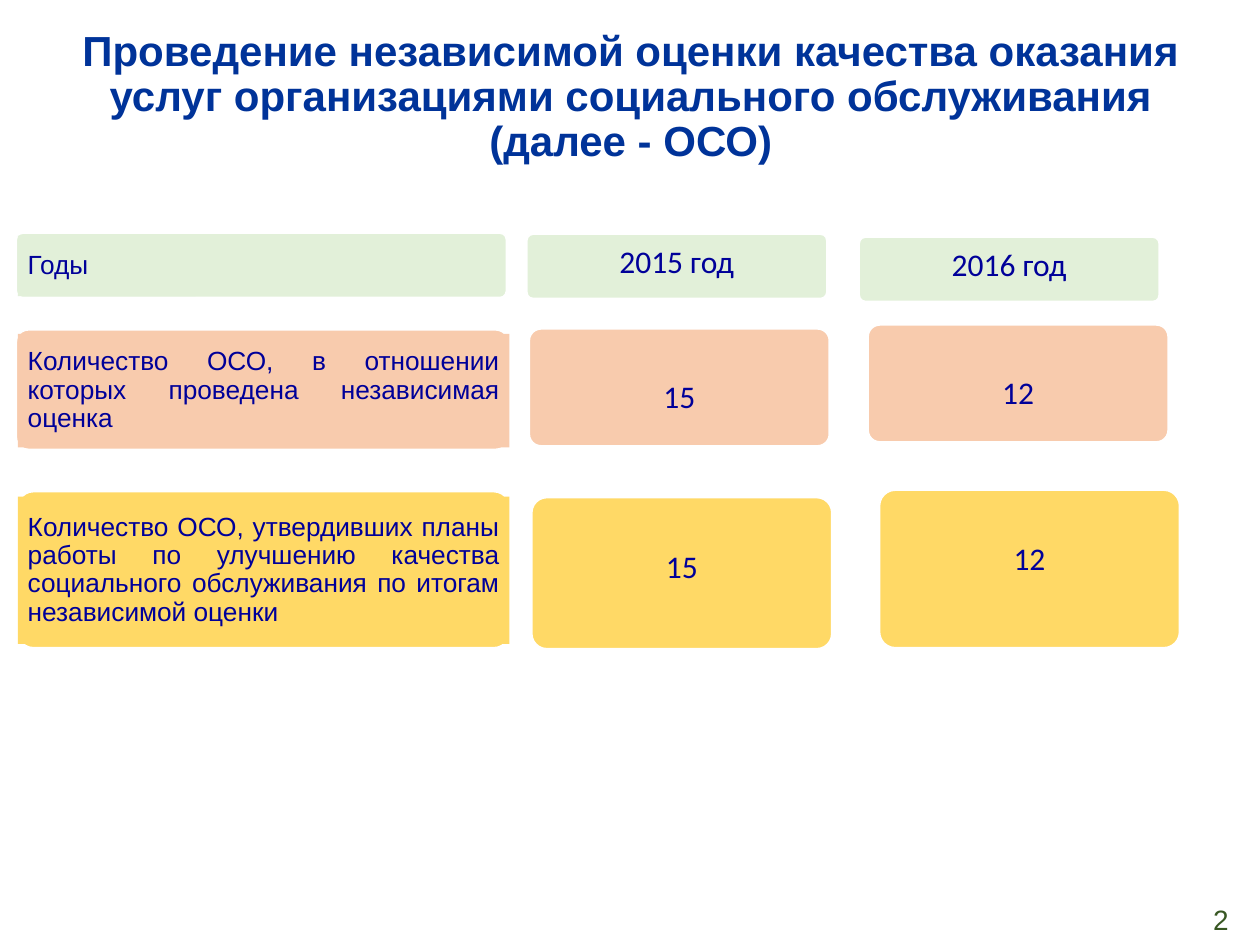
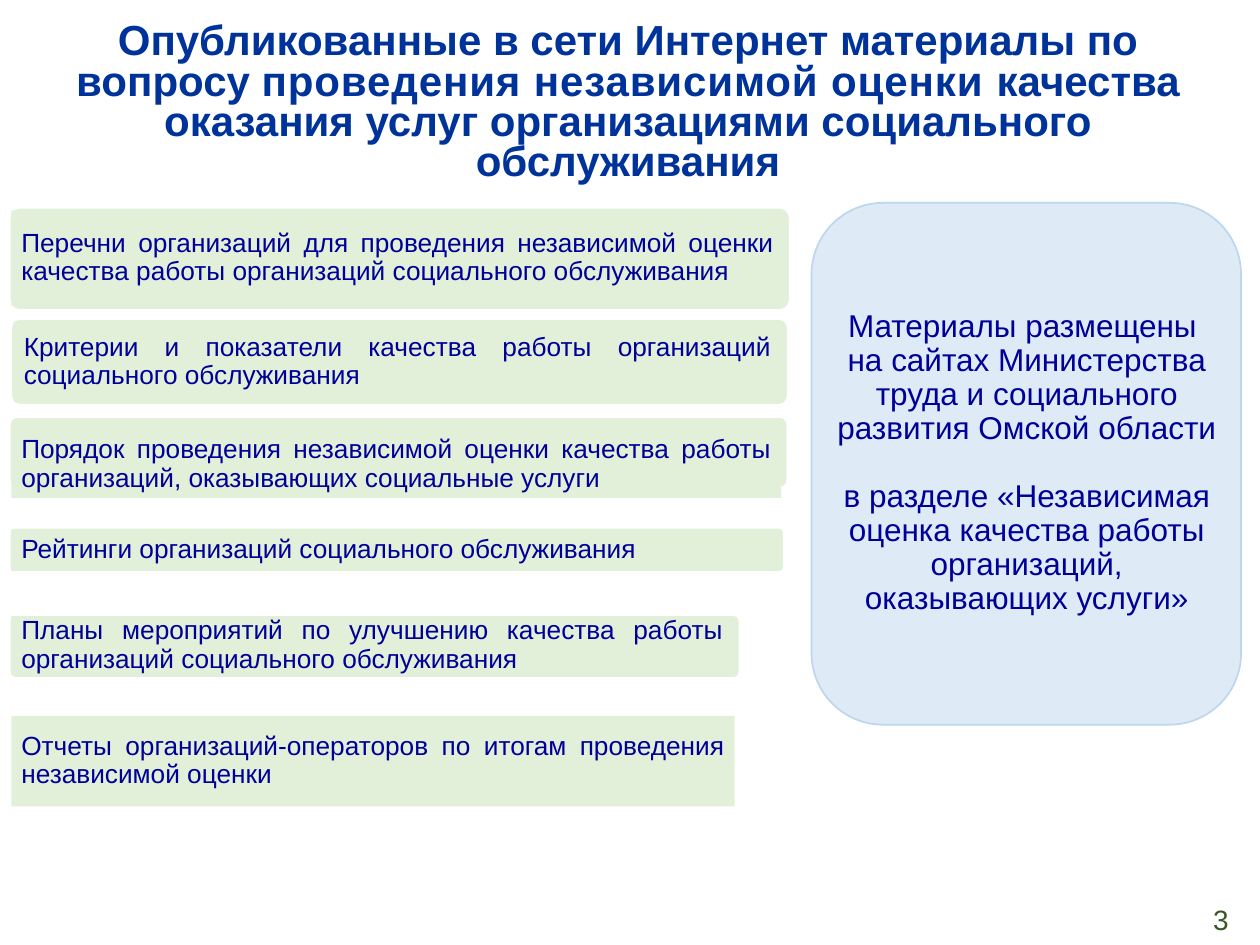
import pptx
import pptx.dml.color
import pptx.enum.shapes
import pptx.enum.text
import pptx.util

Cm = pptx.util.Cm
Pt = pptx.util.Pt
Align = pptx.enum.text.PP_ALIGN
Anchor = pptx.enum.text.MSO_ANCHOR
Preset = pptx.enum.shapes.MSO_SHAPE

# Shared colours
WHITE = "FFFFFF"
TITLE_BLUE = "003399"
TEXT_BLUE = "000099"
NUMBER_GREEN = "385723"
GREEN = "E2F0D9"
ORANGE = "F8CBAD"
YELLOW = "FFD966"
PALE_BLUE = "DEEBF7"
EDGE_BLUE = "BDD7EE"


def paint(color_format, hex_color):
    color_format.rgb = pptx.dml.color.RGBColor.from_string(hex_color)


class Builder:
    """Holds the deck, its style and the current page."""

    def __init__(self):
        self.deck = pptx.Presentation()
        self.deck.slide_width, self.deck.slide_height = Cm(25.4), Cm(19.05)
        self.page = None

    def new_page(self, number):
        self.page = self.deck.slides.add_slide(self.deck.slide_layouts[5])
        box = self.text_box((19.3, 18.03, 5.72, 1.02))
        self.add_text(box, [str(number)], 16, color=NUMBER_GREEN, align=Align.RIGHT)

    def title(self, frame, spans, line_spacing):
        """Spans are (text, letter spacing in hundredths of a point)."""
        box = self.page.shapes.title
        box.left, box.top, box.width, box.height = map(Cm, frame)
        box.text_frame.auto_size = pptx.enum.text.MSO_AUTO_SIZE.NONE
        box.text_frame.word_wrap = True
        box.text_frame.vertical_anchor = Anchor.MIDDLE
        para = box.text_frame.paragraphs[0]
        para.alignment, para.line_spacing = Align.CENTER, line_spacing
        for text, tracking in spans:
            span = self.span(para, text, 24, "Arial", TITLE_BLUE)
            span.font.bold = True
            if tracking:
                span.font._element.set("spc", str(tracking))

    def span(self, para, text, size, font, color):
        span = para.add_run()
        span.text = text
        span.font.size, span.font.name = Pt(size), font
        paint(span.font.color, color)
        return span

    def text_box(self, frame):
        return self.page.shapes.add_textbox(*map(Cm, frame))

    def shape(self, preset, frame, fill, line=None, radius=None):
        box = self.page.shapes.add_shape(preset, *map(Cm, frame))
        box.shadow.inherit = False
        box.fill.solid()
        paint(box.fill.fore_color, fill)
        if line:
            paint(box.line.color, line)
            box.line.width = Pt(1)
        else:
            box.line.fill.background()
        if radius:
            box.adjustments[0] = radius
        return box

    def rounded(self, frame, fill):
        return self.shape(Preset.ROUNDED_RECTANGLE, frame, fill, WHITE, 0.1)

    def add_text(self, box, paragraphs, size, font="Arial", color=TEXT_BLUE,
                 align=Align.CENTER, anchor=Anchor.MIDDLE, inset=None,
                 line_spacing=None, gap=0):
        frame = box.text_frame
        frame.word_wrap, frame.vertical_anchor = True, anchor
        if inset is not None:
            frame.margin_left = frame.margin_right = Cm(inset)
            frame.margin_top = frame.margin_bottom = Cm(inset)
        for index, text in enumerate(paragraphs):
            para = frame.add_paragraph() if index else frame.paragraphs[0]
            para.alignment = align
            if line_spacing:
                para.line_spacing = line_spacing
            if index:
                para.space_before = Pt(gap)
            for part, line in enumerate(text.split("\n")):
                if part:
                    para.add_line_break()
                self.span(para, line, size, font, color)

    def label(self, text, frame, fill, back=None):
        """Justified label, with a rounded plate behind it if given."""
        if back:
            self.rounded(back, fill)
        box = self.shape(Preset.RECTANGLE, frame, fill)
        self.add_text(box, [text], 15, align=Align.JUSTIFY, inset=0.2, line_spacing=0.9)

    def value(self, text, frame, fill, top):
        box = self.rounded(frame, fill)
        self.add_text(box, [text], 18, font="Calibri", anchor=Anchor.TOP)
        box.text_frame.margin_top = Cm(top)


def assessment_page(builder):
    builder.new_page(2)
    builder.title((0.69, 0.84, 24.05, 2.26), [
        ("Проведение независимой оценки качества оказания услуг "
         "организациями социального обслуживания (далее - ОСО)", 0)], 0.9)

    # Rows: fill, label, plate, label frame, top inset, values with left, top, height
    rows = [
        (GREEN, "Годы", (0.33, 4.7, 9.88, 1.3), (0.36, 4.75, 3.58, 1.22), 0.13,
         [("2015 год", 10.62, 4.72, 1.3), ("2016 год", 17.32, 4.78, 1.3)]),
        (ORANGE, "Количество ОСО, в отношении которых проведена независимая оценка",
         (0.33, 6.65, 9.91, 2.41), (0.36, 6.73, 9.91, 2.29), 0.9,
         [("15", 10.67, 6.63, 2.36), ("12", 17.5, 6.55, 2.36)]),
        (YELLOW, "Количество ОСО, утвердивших планы работы по улучшению качества "
         "социального обслуживания по итогам независимой оценки",
         (0.36, 9.91, 9.91, 3.15), (0.36, 10.01, 9.91, 2.97), 0.9,
         [("15", 10.72, 10.03, 3.05), ("12", 17.73, 9.88, 3.18)]),
    ]
    for fill, text, plate, frame, inset, values in rows:
        builder.label(text, frame, fill, plate)
        for value, left, top, height in values:
            builder.value(value, (left, top, 6.05, height), fill, inset)


def publications_page(builder):
    builder.new_page(3)
    builder.title((0.58, 1.02, 24.16, 2.16), [
        ("Опубликованные в сети Интернет материалы по вопросу ", 0),
        ("проведения независимой оценки ", 50),
        ("качества оказания услуг организациями социального обслуживания", 0)], 0.8)

    # Published materials: text, label frame, plate
    materials = [
        ("Перечни организаций для проведения независимой оценки качества работы "
         "организаций социального обслуживания",
         (0.23, 4.24, 15.57, 1.93), (0.2, 4.19, 15.72, 2.06)),
        ("Критерии и показатели качества работы организаций социального обслуживания",
         (0.28, 6.48, 15.47, 1.63), (0.23, 6.43, 15.65, 1.73)),
        ("Порядок проведения независимой оценки качества работы организаций, "
         "оказывающих социальные услуги",
         (0.23, 8.69, 15.52, 1.35), (0.2, 8.41, 15.67, 1.42)),
        ("Рейтинги организаций социального обслуживания",
         (0.23, 10.67, 15.44, 0.84), (0.2, 10.64, 15.6, 0.89)),
        ("Планы мероприятий по улучшению качества работы организаций "
         "социального обслуживания",
         (0.23, 12.42, 14.55, 1.19), (0.2, 12.4, 14.71, 1.27)),
        ("Отчеты организаций-операторов по итогам проведения независимой оценки",
         (0.23, 14.43, 14.58, 1.83), None),
    ]
    for text, frame, plate in materials:
        builder.label(text, frame, GREEN, plate)

    # Where the materials are published
    builder.shape(Preset.ROUNDED_RECTANGLE, (16.36, 4.09, 8.66, 10.52),
                  PALE_BLUE, EDGE_BLUE)
    box = builder.text_box((16.66, 4.6, 8.08, 9.47))
    builder.add_text(box, [
        "Материалы размещены \nна сайтах Министерства труда и социального "
        "развития Омской области",
        "в разделе «Независимая оценка качества работы организаций, "
        "оказывающих услуги»"], 18, inset=0.18, line_spacing=0.9, gap=19.5)


def main():
    builder = Builder()
    assessment_page(builder)
    publications_page(builder)
    builder.deck.save("out.pptx")


if __name__ == "__main__":
    main()
